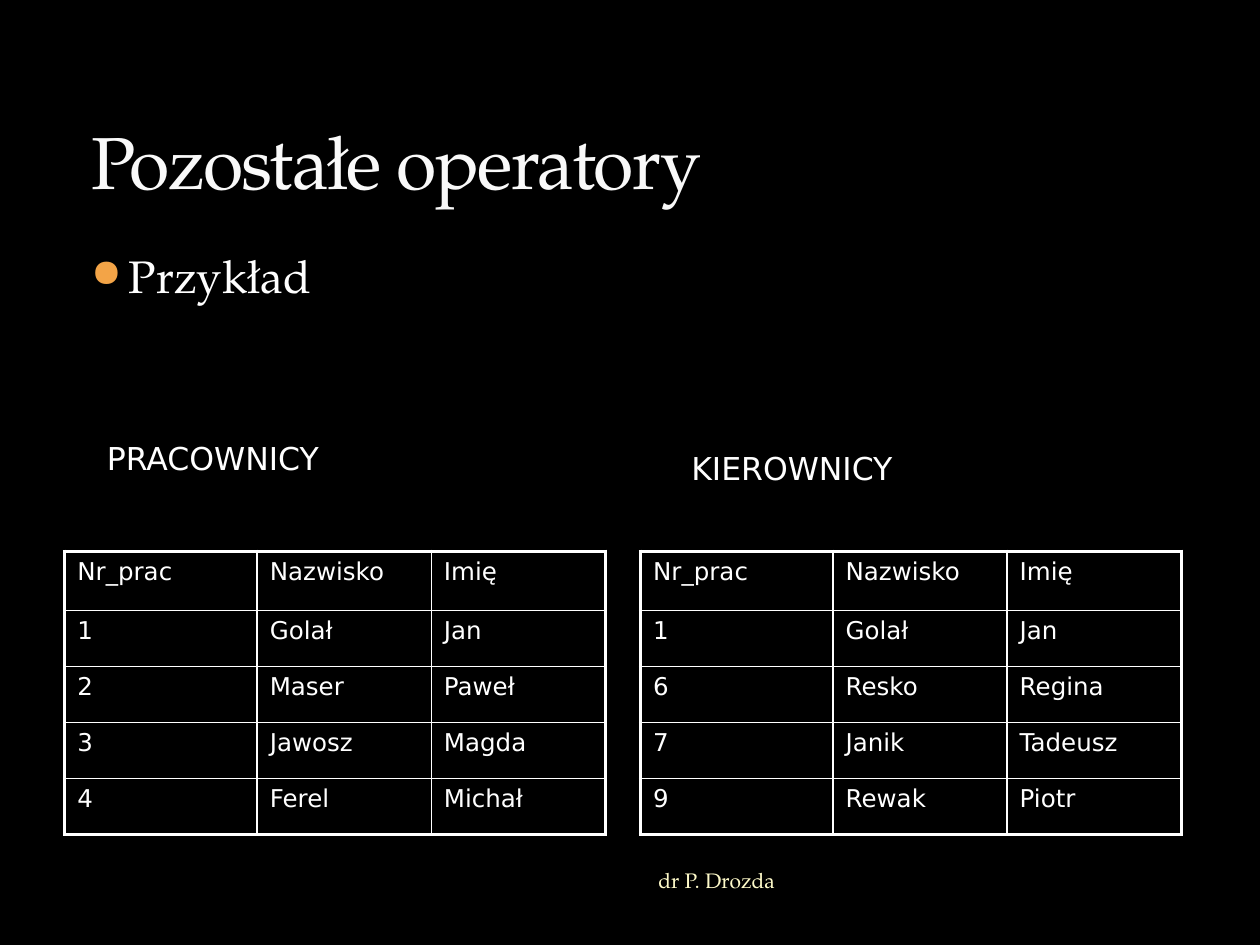
from lxml import etree
from pptx import Presentation
from pptx.dml.color import RGBColor
from pptx.enum.text import MSO_ANCHOR, PP_ALIGN
from pptx.oxml.ns import qn
from pptx.util import Pt

TOP, MIDDLE, BOTTOM = MSO_ANCHOR.TOP, MSO_ANCHOR.MIDDLE, MSO_ANCHOR.BOTTOM
LEFT, RIGHT = PP_ALIGN.LEFT, PP_ALIGN.RIGHT
SERIF, SANS = "TeX Gyre Pagella", "DejaVu Sans"
COLORS = {"back": "000000", "text": "FFFFFF", "title": "F9F9F9",
          "footer": "FEFAC9", "bullet": "F3A447"}


def add_run(p, text, size, font, color):
    r = p.add_run()
    r.text = text
    for name, value in {"size": Pt(size), "name": font, "bold": False}.items():
        setattr(r.font, name, value)
    r.font.color.rgb = RGBColor.from_string(COLORS[color])
    return r


def set_border(cell, side, width):
    """Draw one side (L, R, T or B) of a cell as a solid line."""
    ln = etree.SubElement(cell._tc.get_or_add_tcPr(), qn(f"a:ln{side}"), w=str(Pt(width)))
    fill = etree.SubElement(ln, qn("a:solidFill"))
    etree.SubElement(fill, qn("a:srgbClr"), val=COLORS["text"])


prs = Presentation()
prs.slide_width, prs.slide_height = Pt(720), Pt(540)
s = prs.slides.add_slide(prs.slide_layouts[6])
s.background.fill.solid()
s.background.fill.fore_color.rgb = RGBColor.from_string(COLORS["back"])

# Text: box, anchor, alignment, wording, size, font, colour
texts = [
    ((168, 488, 282, 30), MIDDLE, RIGHT, "dr P. Drozda", 12, SERIF, "footer"),
    ((45, 24, 630, 96), BOTTOM, LEFT, "Pozostałe operatory", 42, SERIF, "title"),
    ((45, 138, 309, 336), TOP, LEFT, "Przykład", 26, SERIF, "text"),
    ((54, 247.5, 221, 29), TOP, LEFT, "PRACOWNICY", 18, SANS, "text"),
    ((388, 253, 158, 29), TOP, LEFT, "KIEROWNICY", 18, SANS, "text"),
]
for box, anchor, align, text, size, font, color in texts:
    tf = s.shapes.add_textbox(*map(Pt, box)).text_frame
    tf.word_wrap = True
    tf.vertical_anchor = anchor
    p = tf.paragraphs[0]
    p.alignment = align
    r = add_run(p, text, size, font, color)
    if color == "title":
        r.font._element.set("spc", "-100")
    if text == "Przykład":
        p.space_before = Pt(6)
        pPr = p._p.get_or_add_pPr()
        pPr.set("marL", str(Pt(21.6)))
        pPr.set("indent", str(-Pt(21.6)))
        bu_color = etree.SubElement(pPr, qn("a:buClr"))
        etree.SubElement(bu_color, qn("a:srgbClr"), val=COLORS["bullet"])
        etree.SubElement(pPr, qn("a:buSzPct"), val="85000")
        etree.SubElement(pPr, qn("a:buChar"), char="●")

# Tables: left edge and rows below the shared header
header = ("Nr_prac", "Nazwisko", "Imię")
tables = [
    (366, [("1", "Golał", "Jan"), ("6", "Resko", "Regina"),
           ("7", "Janik", "Tadeusz"), ("9", "Rewak", "Piotr")]),
    (37, [("1", "Golał", "Jan"), ("2", "Maser", "Paweł"),
          ("3", "Jawosz", "Magda"), ("4", "Ferel", "Michał")]),
]
widths = [110, 99.5, 99.5]
heights = [34] + [32] * 4
THICK, THIN = 2.25, 1
for left, people in tables:
    rows = [header] + people
    frame = s.shapes.add_table(len(rows), len(header), Pt(left), Pt(315),
                               Pt(sum(widths)), Pt(sum(heights)))
    table = frame.table
    table.first_row = table.horz_banding = False
    for col, width in zip(table.columns, widths):
        col.width = Pt(width)
    for i, row in enumerate(rows):
        table.rows[i].height = Pt(heights[i])
        for j, text in enumerate(row):
            cell = table.cell(i, j)
            outer = {"L": j == 0, "R": j == len(header) - 1,
                     "T": i == 0, "B": i == len(rows) - 1}
            for side, is_outer in outer.items():
                set_border(cell, side, THICK if is_outer else THIN)
            cell.fill.background()
            add_run(cell.text_frame.paragraphs[0], text, 14, SANS, "text")

prs.save("out.pptx")
